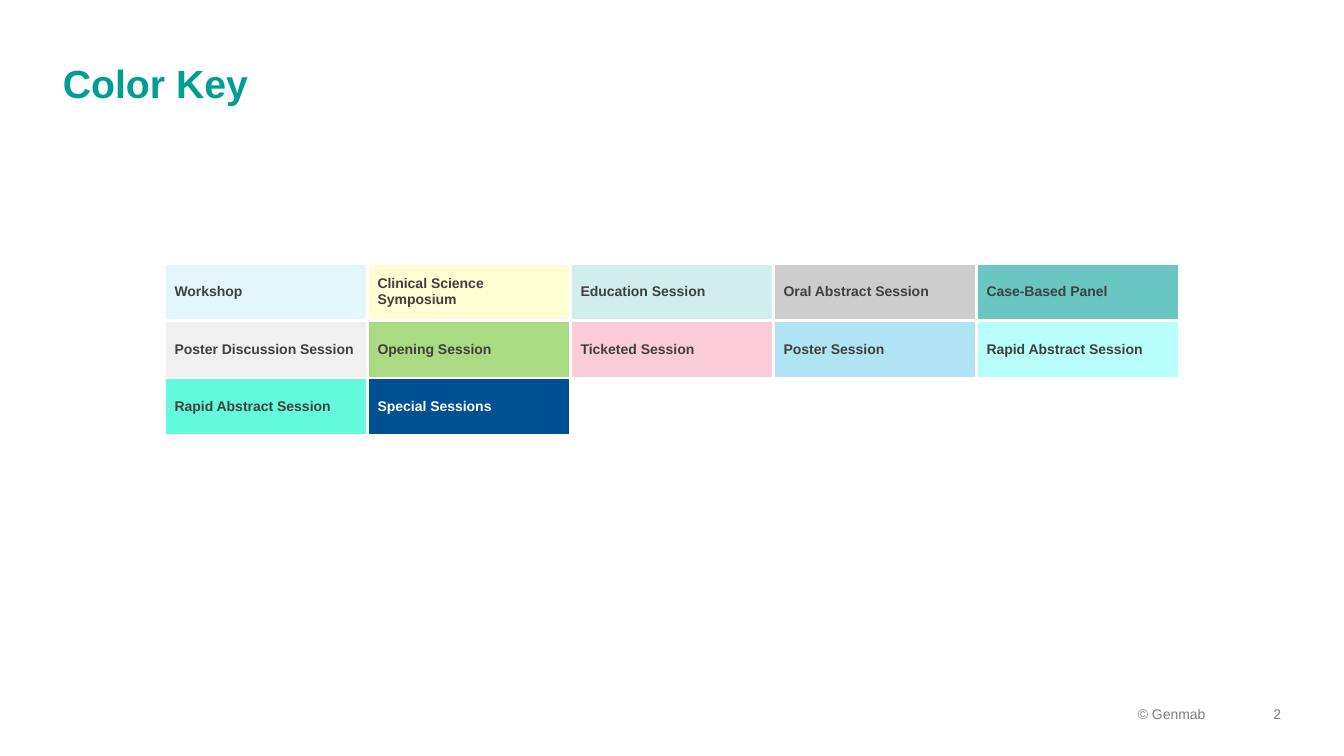
from pptx import Presentation
from pptx.dml.color import RGBColor
from pptx.enum.text import MSO_ANCHOR, PP_ALIGN
from pptx.oxml import parse_xml
from pptx.oxml.ns import nsdecls
from pptx.util import Pt

SESSIONS = [
    ("Workshop", "E5F6FB"),
    ("Clinical Science Symposium", "FFFDD1"),
    ("Education Session", "D1EEEC"),
    ("Oral Abstract Session", "CDCDCE"),
    ("Case-Based Panel", "6AC6C0"),
    ("Poster Discussion Session", "F0F0F0"),
    ("Opening Session", "AADA82"),
    ("Ticketed Session", "FACCDA"),
    ("Poster Session", "B0E3F3"),
    ("Rapid Abstract Session", "B8FFFB"),
    ("Rapid Abstract Session", "63F9DB"),
    ("Special Sessions", "005193"),
]
ROWS, COLS = 3, 5
COL_W, ROW_H = 145, 41


def rgb(value):
    return RGBColor.from_string(value)


def write(tf, text, size=10, color="404040", bold=False, align=PP_ALIGN.LEFT):
    p = tf.paragraphs[0]
    p.alignment = align
    r = p.add_run()
    r.text = text
    r.font.name = "Arial"
    r.font.size = Pt(size)
    r.font.bold = bold
    r.font.color.rgb = rgb(color)


prs = Presentation()
prs.slide_width, prs.slide_height = Pt(960), Pt(540)
s = prs.slides.add_slide(prs.slide_layouts[6])

# Title and footer
grey_right = dict(color="808080", align=PP_ALIGN.RIGHT)
for text, box, anchor, style in [
    ("Color Key", (45, 39, 870, 41), MSO_ANCHOR.MIDDLE,
     dict(size=28, color="009D94", bold=True)),
    ("© Genmab", (752, 504, 109, 12), MSO_ANCHOR.TOP, grey_right),
    ("2", (861, 504, 54, 12), MSO_ANCHOR.TOP, grey_right),
]:
    tf = s.shapes.add_textbox(*map(Pt, box)).text_frame
    tf.margin_left = tf.margin_right = tf.margin_top = tf.margin_bottom = 0
    tf.word_wrap = True
    tf.vertical_anchor = anchor
    write(tf, text, **style)

# Color key table
table = s.shapes.add_table(ROWS, COLS, Pt(117.5), Pt(188),
                           Pt(COLS * COL_W), Pt(ROWS * ROW_H)).table
table.first_row = table.horz_banding = False
for col in table.columns:
    col.width = Pt(COL_W)
for row in table.rows:
    row.height = Pt(ROW_H)

for i, cell in enumerate(table.iter_cells()):
    tcPr = cell._tc.get_or_add_tcPr()
    for side in "LRTB":
        tcPr.append(parse_xml(
            f'<a:ln{side} {nsdecls("a")} w="{Pt(2.25)}"><a:solidFill>'
            f'<a:srgbClr val="FFFFFF"/></a:solidFill></a:ln{side}>'))
    cell.vertical_anchor = MSO_ANCHOR.MIDDLE
    if i < len(SESSIONS):
        name, color = SESSIONS[i]
        cell.fill.solid()
        cell.fill.fore_color.rgb = rgb(color)
        write(cell.text_frame, name, bold=True,
              color="FFFFFF" if name == "Special Sessions" else "404040")
    else:
        cell.fill.background()

prs.save("out.pptx")
